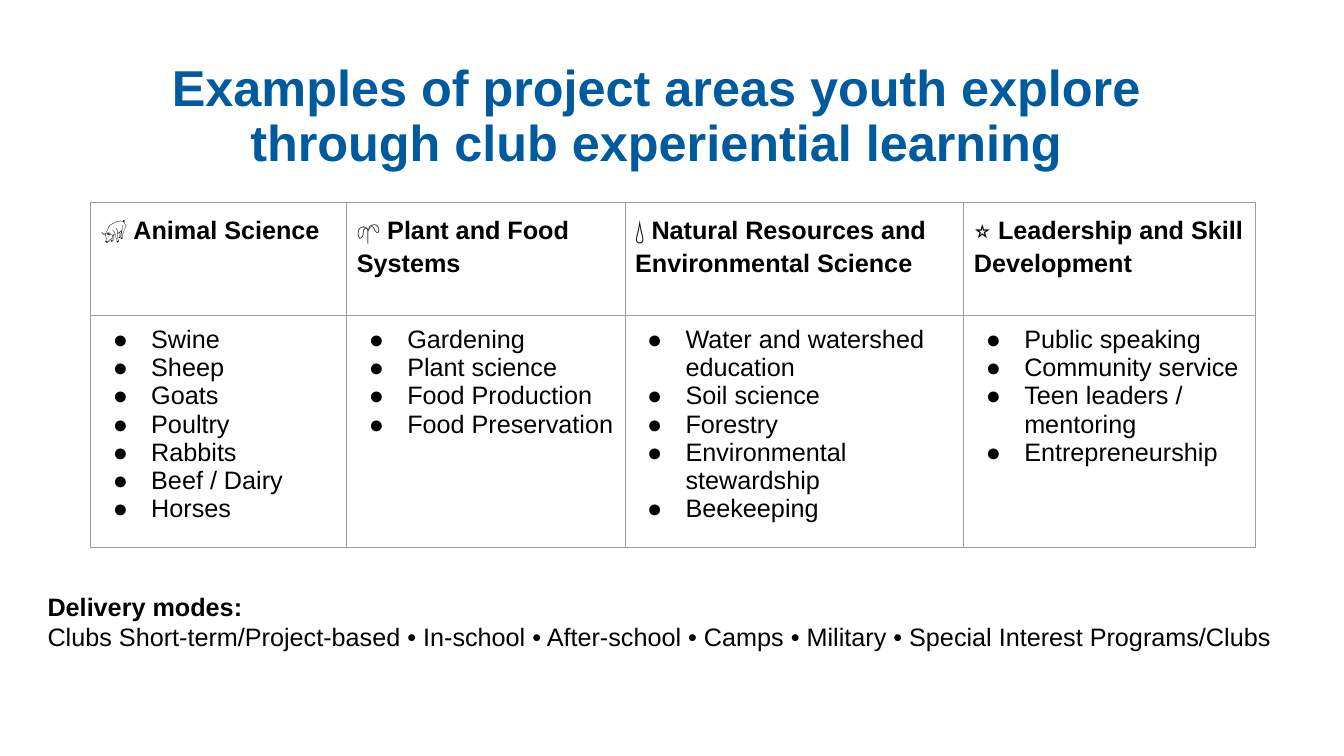
from dataclasses import dataclass

from lxml import etree
from pptx import Presentation
from pptx.dml.color import RGBColor
from pptx.enum import text
from pptx.oxml import ns
from pptx.util import Inches, Pt


@dataclass(frozen=True)
class Theme:
    font: str = "Arial"
    title_size: int = 36
    body_size: int = 18
    title: str = "005A9E"
    ink: str = "000000"
    border: str = "9E9E9E"
    border_width: float = 0.75


THEME = Theme()
WIDTH, HEIGHT = Inches(13.33), Inches(7.5)
INSET = Inches(0.1)
COLUMN_WIDTHS = [2.54, 2.76, 3.36, 2.89]
ROW_HEIGHTS = [1.12, 2.15]

TITLE = "Examples of project areas youth explore through club experiential learning"
PROJECT_AREAS = [
    ("🐖", "Animal Science",
     ["Swine", "Sheep", "Goats", "Poultry", "Rabbits", "Beef / Dairy", "Horses"]),
    ("🌱", "Plant and Food Systems",
     ["Gardening", "Plant science", "Food Production", "Food Preservation"]),
    ("💧", "Natural Resources and Environmental Science",
     ["Water and watershed education", "Soil science", "Forestry",
      "Environmental stewardship", "Beekeeping"]),
    ("⭐", "Leadership and Skill Development",
     ["Public speaking", "Community service", "Teen leaders / mentoring",
      "Entrepreneurship"]),
]
DELIVERY_LABEL = "Delivery modes:"
DELIVERY_MODES = ("Clubs Short-term/Project-based • In-school • After-school • Camps"
                  " • Military • Special Interest Programs/Clubs")


def style(p, size=THEME.body_size, color=THEME.ink, bold=False):
    p.font.name = THEME.font
    p.font.size = Pt(size)
    p.font.bold = bold
    p.font.color.rgb = RGBColor.from_string(color)


def add_paragraph(tf, index):
    return tf.add_paragraph() if index else tf.paragraphs[0]


def add_text_box(slide, x, y, w, h):
    box = slide.shapes.add_textbox(
        round(WIDTH * x), round(HEIGHT * y), round(WIDTH * w), round(HEIGHT * h))
    tf = box.text_frame
    tf.word_wrap = True
    tf.margin_left = tf.margin_right = tf.margin_top = tf.margin_bottom = INSET
    return tf


def add_title(slide):
    tf = add_text_box(slide, 0.057, 0.059, 0.863, 0.193)
    tf.margin_top = tf.margin_bottom = INSET // 2
    tf.vertical_anchor = text.MSO_ANCHOR.MIDDLE
    p = tf.paragraphs[0]
    p.text = TITLE
    p.alignment = text.PP_ALIGN.CENTER
    p.line_spacing = 0.9
    style(p, THEME.title_size, THEME.title, bold=True)


def format_cell(cell):
    cell.margin_left = cell.margin_right = INSET
    cell.margin_top = cell.margin_bottom = INSET
    tc_pr = cell._tc.get_or_add_tcPr()
    for side in ("lnL", "lnR", "lnT", "lnB"):
        line = etree.SubElement(tc_pr, ns.qn(f"a:{side}"), w=str(Pt(THEME.border_width)))
        fill = etree.SubElement(line, ns.qn("a:solidFill"))
        etree.SubElement(fill, ns.qn("a:srgbClr"), val=THEME.border)
    cell.fill.background()


def fill_heading(cell, icon, heading):
    p = cell.text_frame.paragraphs[0]
    p.line_spacing = 1.15
    style(p)
    p.add_run().text = f"{icon} "
    r = p.add_run()
    r.text = heading
    r.font.bold = True


def fill_bullets(cell, items):
    for index, item in enumerate(items):
        p = add_paragraph(cell.text_frame, index)
        p.text = item
        p_pr = p._p.get_or_add_pPr()
        p_pr.set("marL", str(Inches(0.5)))
        p_pr.set("indent", str(Inches(-0.38)))
        color = etree.SubElement(p_pr, ns.qn("a:buClr"))
        etree.SubElement(color, ns.qn("a:srgbClr"), val=THEME.ink)
        etree.SubElement(p_pr, ns.qn("a:buFont"), typeface=THEME.font)
        etree.SubElement(p_pr, ns.qn("a:buChar"), char="●")
        style(p)


def add_area_table(slide):
    table = slide.shapes.add_table(
        len(ROW_HEIGHTS), len(PROJECT_AREAS), round(WIDTH * 0.0675), round(HEIGHT * 0.268),
        Inches(sum(COLUMN_WIDTHS)), Inches(sum(ROW_HEIGHTS))).table
    table.first_row = table.horz_banding = False
    for row, height in zip(table.rows, ROW_HEIGHTS):
        row.height = Inches(height)
    for column, width in zip(table.columns, COLUMN_WIDTHS):
        column.width = Inches(width)
    for cell in table.iter_cells():
        format_cell(cell)
    for index, (icon, heading, items) in enumerate(PROJECT_AREAS):
        fill_heading(table.cell(0, index), icon, heading)
        fill_bullets(table.cell(1, index), items)


def add_delivery_modes(slide):
    tf = add_text_box(slide, 0.028, 0.769, 0.953, 0.059)
    for index, line in enumerate([DELIVERY_LABEL, DELIVERY_MODES]):
        p = add_paragraph(tf, index)
        p.text = line
        style(p, bold=index == 0)


def main():
    prs = Presentation()
    prs.slide_width, prs.slide_height = WIDTH, HEIGHT
    slide = prs.slides.add_slide(prs.slide_layouts[6])
    add_title(slide)
    add_area_table(slide)
    add_delivery_modes(slide)
    prs.save("out.pptx")


if __name__ == "__main__":
    main()
